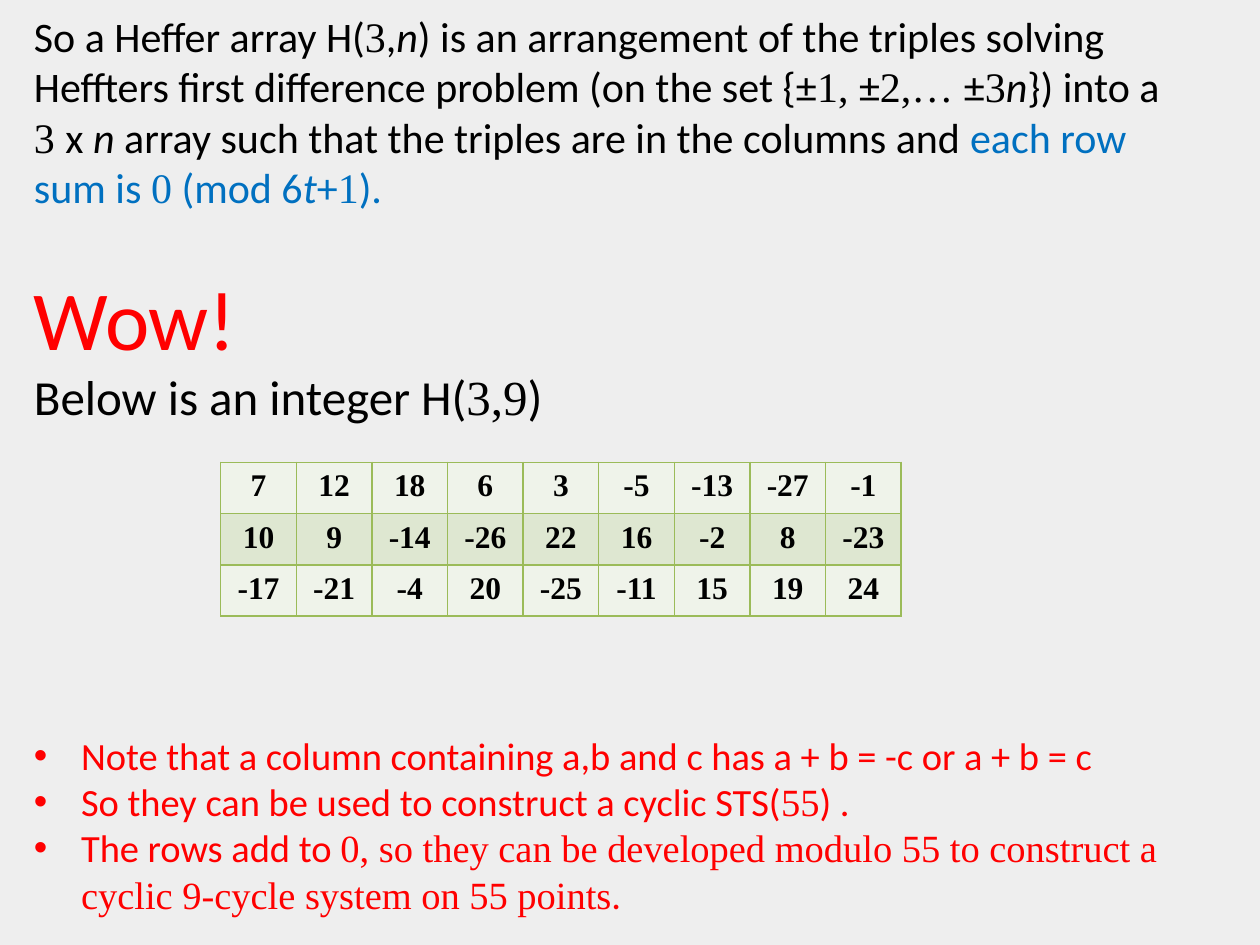
from lxml import etree
from pptx import Presentation
from pptx import util as u
from pptx.dml import color
from pptx.enum import text
from pptx.oxml import ns

BLACK = color.RGBColor(0x00, 0x00, 0x00)
BLUE = color.RGBColor(0x00, 0x70, 0xC0)
RED = color.RGBColor(0xFF, 0x00, 0x00)
BACKGROUND = color.RGBColor(0xEE, 0xEE, 0xEE)
BORDER = color.RGBColor(0x9B, 0xBB, 0x59)
BANDS = [color.RGBColor(0xEF, 0xF3, 0xEA), color.RGBColor(0xDE, 0xE7, 0xD1)]
SANS, SERIF = "Calibri", "Times New Roman"


def add_runs(paragraph, size, colour, pieces):
    for wording, style in pieces:
        run = paragraph.add_run()
        run.text = wording
        run.font.size = u.Pt(size)
        run.font.name = SERIF if style == "serif" else SANS
        run.font.italic = style == "italic"
        run.font.color.rgb = colour


def add_borders(cell):
    properties = cell._tc.get_or_add_tcPr()
    for side in ("lnL", "lnR", "lnT", "lnB"):
        line = etree.SubElement(properties, ns.qn(f"a:{side}"), w=str(u.Pt(1)))
        fill = etree.SubElement(line, ns.qn("a:solidFill"))
        etree.SubElement(fill, ns.qn("a:srgbClr"), val=str(BORDER))


presentation = Presentation()
presentation.slide_width = u.Cm(25.4)
presentation.slide_height = u.Cm(19.05)
slide = presentation.slides.add_slide(presentation.slide_layouts[1])
slide.background.fill.solid()
slide.background.fill.fore_color.rgb = BACKGROUND
title = slide.shapes.title.element
title.getparent().remove(title)

body = slide.placeholders[1]
body.left, body.top = u.Cm(0.43), u.Cm(0.08)
body.width, body.height = u.Cm(24.1), u.Cm(18.14)
text_frame = body.text_frame
text_frame.auto_size = text.MSO_AUTO_SIZE.NONE
text_frame.word_wrap = True
text_frame.margin_right = u.Cm(0.85)

definition = [
    ("So a Heffer array H(", ""), ("3", "serif"), (",", ""), ("n", "italic"),
    (") is an arrangement of the triples solving Heffters first difference "
     "problem (on the set {±", ""),
    ("1, ", "serif"), ("±", ""), ("2,… ", "serif"), ("±", ""), ("3", "serif"),
    ("n", "italic"), ("}) into a ", ""), ("3 ", "serif"), ("x ", ""), ("n", "italic"),
    (" array such that the triples are in the columns and ", ""),
]
row_condition = [
    ("each row sum is ", ""), ("0", "serif"), (" (mod 6", ""), ("t", "italic"),
    ("+", ""), ("1", "serif"), (").", ""),
]
example = [("Below is an integer H(", ""), ("3,9", "serif"), (")", "")]
column_note = [("Note that a column containing a,b and c has a + b = -c or a + b = c", "")]
triple_note = [("So they can be used to construct a cyclic STS(", ""), ("55", "serif"), (") .", "")]
row_note = [
    ("The rows add to ", ""),
    ("0, so they can be developed modulo 55 to construct a cyclic 9-cycle system "
     "on 55 points", "serif"),
    (".", ""),
]

paragraphs = [
    (0, False, 24, [(BLACK, definition), (BLUE, row_condition)]),
    (31, False, 48, [(RED, [("Wow!", "")])]),
    (0, False, 28, [(BLACK, example)]),
    (175, True, 22, [(RED, column_note)]),
    (0, True, 22, [(RED, triple_note)]),
    (0, True, 22, [(RED, row_note)]),
]
for index, (gap, bulleted, size, groups) in enumerate(paragraphs):
    paragraph = text_frame.add_paragraph() if index else text_frame.paragraphs[0]
    paragraph.space_before = u.Pt(gap)
    properties = paragraph._p.get_or_add_pPr()
    indent = u.Cm(0.95) if bulleted else 0
    properties.set("marL", str(indent))
    properties.set("indent", str(-indent))
    if bulleted:
        etree.SubElement(properties, ns.qn("a:buFont"), typeface="Arial")
        etree.SubElement(properties, ns.qn("a:buChar"), char="•")
    else:
        etree.SubElement(properties, ns.qn("a:buNone"))
    for colour, pieces in groups:
        add_runs(paragraph, size, colour, pieces)

heffter_array = [
    [7, 12, 18, 6, 3, -5, -13, -27, -1],
    [10, 9, -14, -26, 22, 16, -2, 8, -23],
    [-17, -21, -4, 20, -25, -11, 15, 19, 24],
]
table = slide.shapes.add_table(
    3, 9, u.Cm(4.45), u.Cm(9.32), u.Cm(13.72), u.Cm(3.1)).table
table.first_row = False
table.horz_banding = False
for row_index, values in enumerate(heffter_array):
    for column_index, value in enumerate(values):
        cell = table.cell(row_index, column_index)
        add_borders(cell)
        cell.fill.solid()
        cell.fill.fore_color.rgb = BANDS[row_index % 2]
        cell.text_frame.text = str(value)
        paragraph = cell.text_frame.paragraphs[0]
        paragraph.alignment = text.PP_ALIGN.CENTER
        font = paragraph.runs[0].font
        font.size, font.name, font.bold = u.Pt(18), SERIF, True
        font.color.rgb = BLACK

presentation.save("out.pptx")
